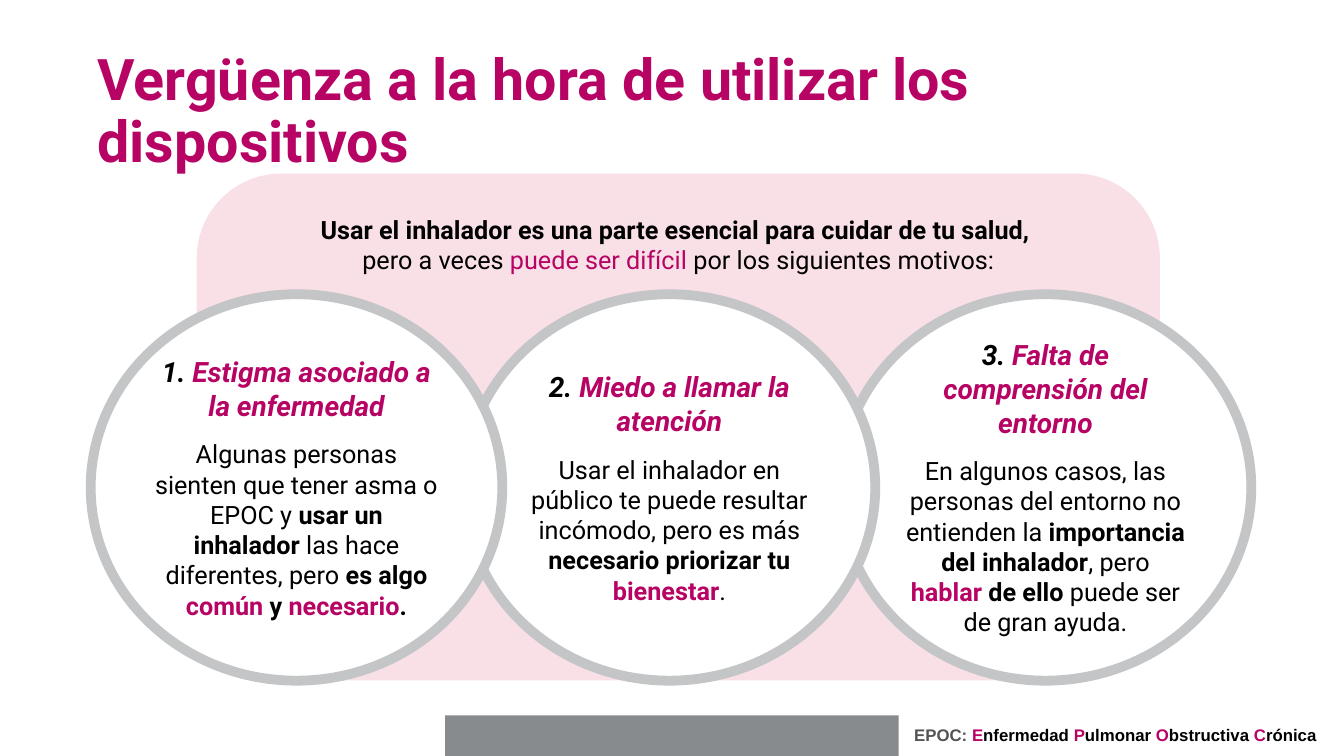
from pptx import Presentation
from pptx.dml.color import RGBColor as Rgb
from pptx.enum.shapes import MSO_SHAPE as Geo
from pptx.enum.text import MSO_ANCHOR as Anchor, PP_ALIGN as Align
from pptx.util import Pt

HUES = {"pink": "B70364", "black": "000000", "slate": "535353", "white": "FFFFFF",
        "blush": "F9E0E7", "ring": "C3C5C6", "bar": "888B8D"}

TITLE = [("Vergüenza a la hora de utilizar los dispositivos", "pink", "b")]
INTRO = [
    [("Usar el inhalador es una parte esencial para cuidar de tu salud, ", "black", "b")],
    [("pero a veces ", "black", ""), ("puede ser difícil ", "pink", ""),
     ("por los siguientes motivos:", "black", "")],
]
REASONS = [
    ("Estigma asociado a la enfermedad", [
        ("Algunas personas sienten que tener asma o EPOC y ", "black", ""),
        ("usar un inhalador ", "black", "b"),
        ("las hace diferentes, pero ", "black", ""),
        ("es algo ", "black", "b"), ("común", "pink", "b"),
        (" y ", "black", "b"), ("necesario", "pink", "b"), (".", "black", "b")]),
    ("Miedo a llamar la atención", [
        ("Usar el inhalador en público te puede resultar incómodo, pero es más ", "black", ""),
        ("necesario priorizar tu ", "black", "b"),
        ("bienestar", "pink", "b"), (".", "black", "")]),
    ("Falta de comprensión del entorno", [
        ("En algunos casos, las personas del entorno no entienden la ", "black", ""),
        ("importancia del inhalador", "black", "b"), (", pero ", "black", ""),
        ("hablar", "pink", "b"), (" de ello ", "black", "b"),
        ("puede ser de gran ayuda.", "black", "")]),
]
WORDS = ["Enfermedad ", "Pulmonar ", "Obstructiva ", "Crónica"]
LEFTS = [64.8, 331.2, 599.8]


def write(frame, runs, size, font="Roboto", align=Align.LEFT, gap=0, ls=None, first=True):
    para = frame.paragraphs[0] if first else frame.add_paragraph()
    para.alignment = align
    if gap:
        para.space_before = Pt(gap)
    if ls:
        para.line_spacing = ls
    for text, hue, style in runs:
        run = para.add_run()
        run.text = text
        run.font.name, run.font.size = font, Pt(size)
        run.font.bold, run.font.italic = "b" in style, "i" in style
        run.font.color.rgb = Rgb.from_string(HUES[hue])


def setup(shape, anchor, left, top, right, bottom):
    frame = shape.text_frame
    frame.word_wrap = True
    frame.vertical_anchor = anchor
    frame.margin_left, frame.margin_top = Pt(left), Pt(top)
    frame.margin_right, frame.margin_bottom = Pt(right), Pt(bottom)
    return frame


def draw(slide, geo, box, fill, line=None):
    shape = slide.shapes.add_shape(geo, *map(Pt, box))
    shape.shadow.inherit = False
    shape.fill.solid()
    shape.fill.fore_color.rgb = Rgb.from_string(HUES[fill])
    if line:
        shape.line.color.rgb = Rgb.from_string(HUES[line])
        shape.line.width = Pt(7)
    else:
        shape.line.fill.background()
    return shape


def main():
    """Build the slide on reasons for inhaler embarrassment."""
    deck = Presentation()
    deck.slide_width, deck.slide_height = Pt(960), Pt(540)
    slide = deck.slides.add_slide(deck.slide_layouts[6])

    draw(slide, Geo.RECTANGLE, (318, 511, 324, 29), "bar")
    panel = draw(slide, Geo.ROUNDED_RECTANGLE, (140.5, 124, 688, 362), "blush")
    frame = setup(panel, Anchor.TOP, 7.2, 11.5, 7.2, 3.6)
    for num, runs in enumerate(INTRO):
        write(frame, runs, 18, align=Align.CENTER, first=num == 0)

    title = slide.shapes.add_textbox(*map(Pt, (66, 28.8, 828, 104.4)))
    write(setup(title, Anchor.MIDDLE, 3.6, 3.6, 3.6, 3.6), TITLE, 41, ls=0.9)

    cards = list(enumerate(zip(LEFTS, REASONS), 1))
    for num, (left, (head, body)) in reversed(cards):
        disc = draw(slide, Geo.FLOWCHART_CONNECTOR, (left, 210.2, 294, 276), "white", "ring")
        frame = setup(disc, Anchor.MIDDLE, 2.9, 2.9, 2.9, 2.9)
        label = [(f"{num}. ", "black", "bi"), (head, "pink", "bi")]
        write(frame, label, 20, align=Align.CENTER)
        write(frame, body, 18, align=Align.CENTER, gap=12, first=False)

    note = slide.shapes.add_textbox(*map(Pt, (649.4, 514, 310.6, 21.6)))
    runs = [("EPOC: ", "slate", "b")]
    for word in WORDS:
        runs += [(word[0], "pink", "b"), (word[1:], "black", "b")]
    write(setup(note, Anchor.TOP, 3.6, 3.6, 3.6, 3.6), runs, 12, font="Arial")

    deck.save("out.pptx")


if __name__ == "__main__":
    main()
